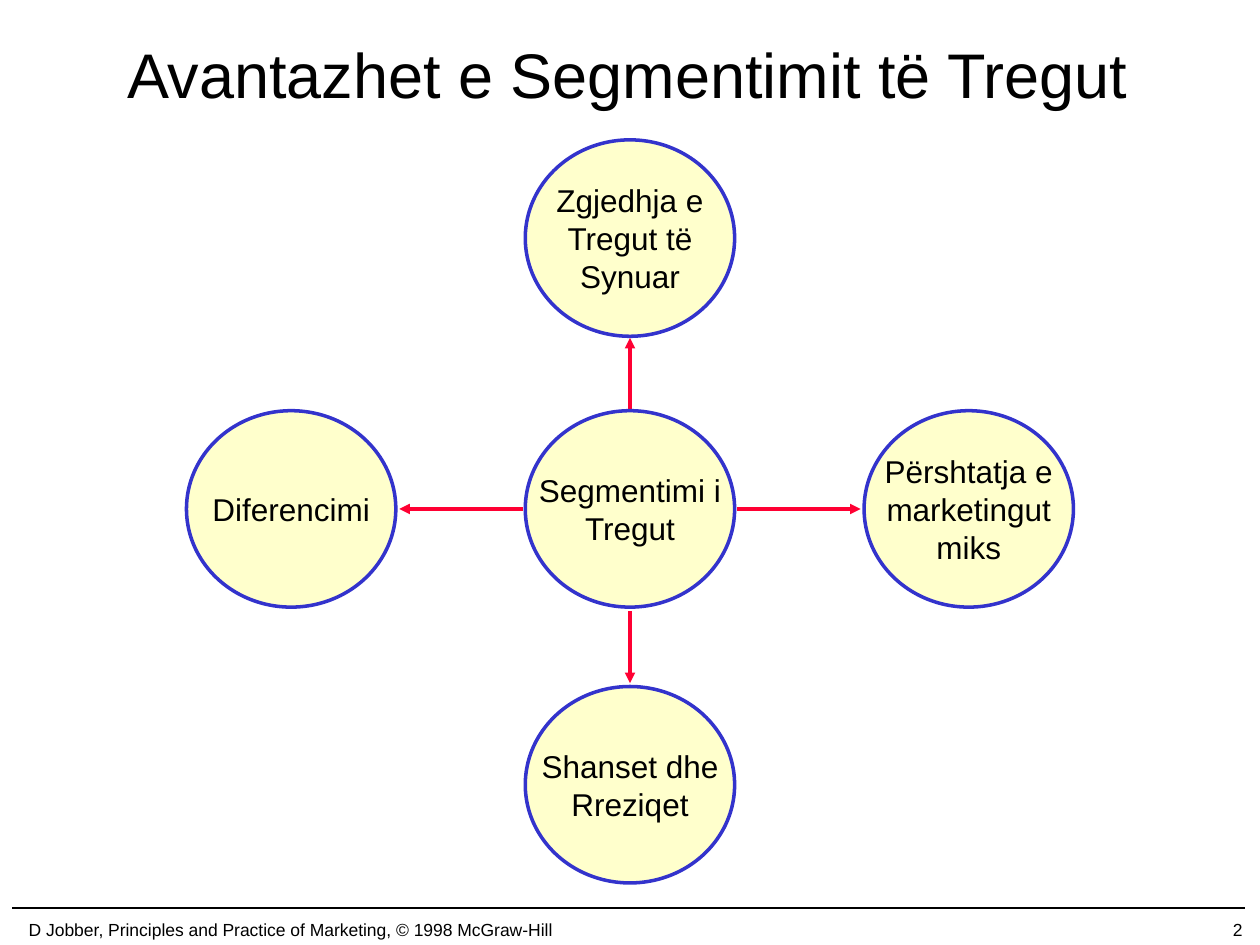
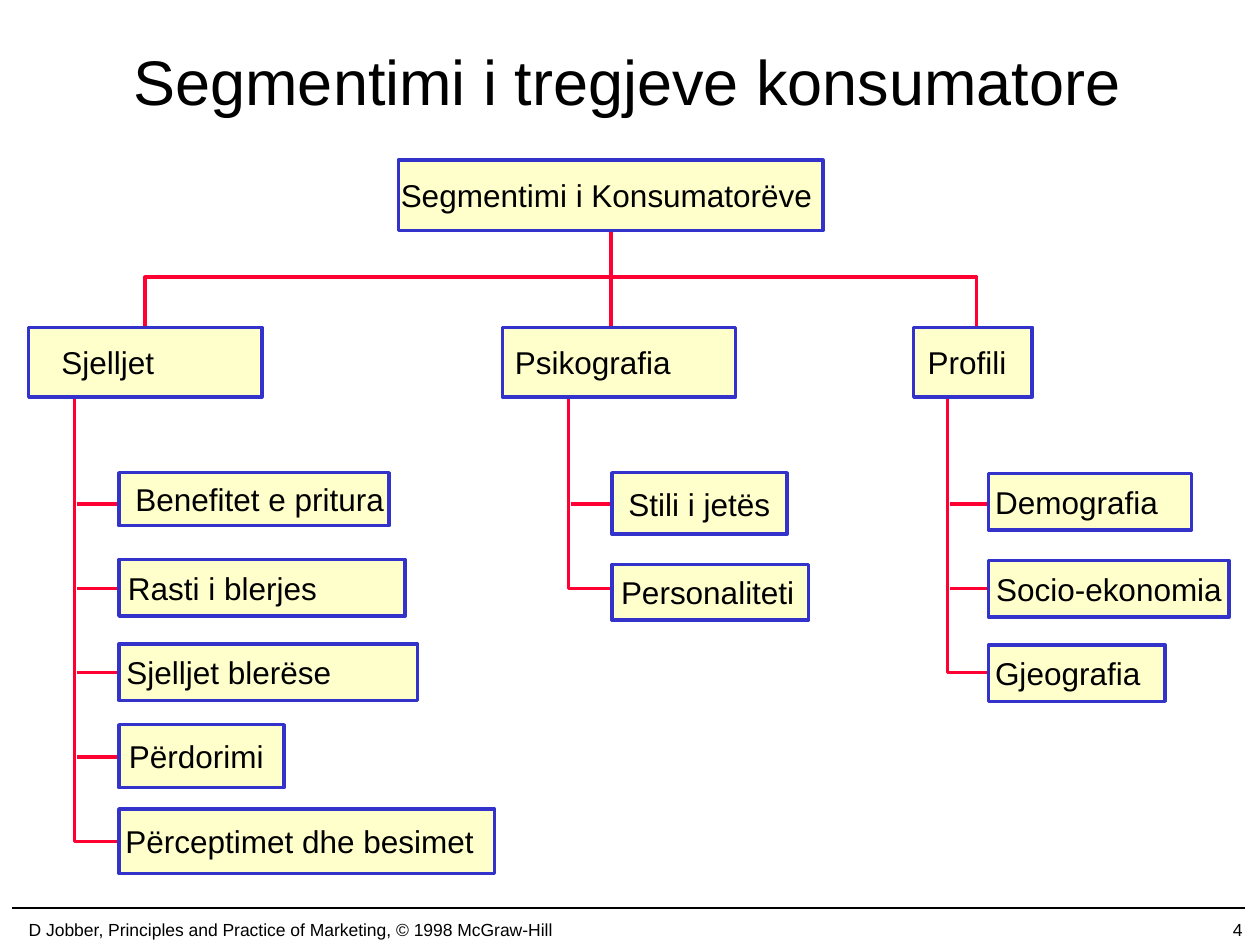
from collections import namedtuple

from lxml import etree
from pptx import Presentation
from pptx import util as u
from pptx.dml.color import RGBColor
from pptx.enum import shapes, text
from pptx.oxml.ns import qn

COLORS = {"ink": "000000", "box": "FFFFCC", "border": "3333CC", "link": "FF0033"}
FONT = "Arial"
FOOTER = "D Jobber, Principles and Practice of Marketing, © 1998 McGraw-Hill"
CENTER, LEFT, RIGHT = text.PP_ALIGN.CENTER, text.PP_ALIGN.LEFT, text.PP_ALIGN.RIGHT

# All lengths are centimetres.
Box = namedtuple("Box", "left top width height")
Spoke = namedtuple("Spoke", "label dx dy distance arrow_start arrow_end")
Leaf = namedtuple("Leaf", "label top width height inset")
Branch = namedtuple("Branch", "label left width inset drop trunk leaf_left leaves")

HUB = Box(10.59, 8.28, 4.22, 3.96)
SPOKES = [
    Spoke("Shanset dhe Rreziqet", 0, 1, 5.56, 2.06, 3.51),
    Spoke("Zgjedhja e Tregut të Synuar", 0, -1, 5.46, 1.98, 3.45),
    Spoke("Përshtatja e marketingut miks", 1, 0, 6.83, 2.16, 4.65),
    Spoke("Diferencimi", -1, 0, 6.83, 2.16, 4.65),
]

TREE = Box(0.58, 3.23, 24.19, 14.38)
# Branch positions are relative to the tree, leaf positions to the branch heading.
BRANCHES = [
    Branch("Sjelljet", 0, 4.7, 0.66, 2.34, 0.92, 1.82, [
        Leaf("Benefitet e pritura", 2.93, 5.44, 1.07, 0.33),
        Leaf("Rasti i blerjes", 4.68, 5.77, 1.14, 0.18),
        Leaf("Sjelljet blerëse", 6.38, 6.02, 1.14, 0.15),
        Leaf("Përdorimi", 8.01, 3.33, 1.27, 0.2),
        Leaf("Përceptimet dhe besimet", 9.71, 7.57, 1.3, 0.13),
    ]),
    Branch("Psikografia", 9.55, 4.7, 0.25, 2.19, 1.33, 2.21, [
        Leaf("Stili i jetës", 2.93, 3.53, 1.24, 0.33),
        Leaf("Personaliteti", 4.78, 3.96, 1.12, 0.18),
    ]),
    Branch("Profili", 17.84, 2.39, 0.28, 1.27, 0.68, 1.51, [
        Leaf("Demografia", 2.95, 4.09, 1.14, 0.13),
        Leaf("Socio-ekonomia", 4.7, 4.85, 1.14, 0.15),
        Leaf("Gjeografia", 6.4, 3.56, 1.14, 0.13),
    ]),
]


def rgb(name):
    return RGBColor.from_string(COLORS[name])


def in_cm(*lengths):
    return [u.Cm(length) for length in lengths]


def write(shape, words, size, align, spacing=None, insets=(0.25, 0.25)):
    frame = shape.text_frame
    frame.word_wrap = True
    frame.vertical_anchor = text.MSO_ANCHOR.MIDDLE
    frame.margin_left, frame.margin_right = in_cm(*insets)
    frame.margin_top = frame.margin_bottom = u.Cm(0.13)
    paragraph = frame.paragraphs[0]
    paragraph.alignment = align
    if spacing:
        paragraph.line_spacing = spacing
    run = paragraph.add_run()
    run.text = words
    run.font.name = FONT
    run.font.size = u.Pt(size)
    run.font.color.rgb = rgb("ink")


def add_text(slide, box, words, size, align, spacing=None):
    write(slide.shapes.add_textbox(*in_cm(*box)), words, size, align, spacing)


def add_panel(slide, kind, box):
    """Add a pale shape with a blue border."""
    shape = slide.shapes.add_shape(kind, *in_cm(*box))
    shape.shadow.inherit = False
    shape.fill.solid()
    shape.fill.fore_color.rgb = rgb("box")
    shape.line.color.rgb = rgb("border")
    shape.line.width = u.Pt(2)
    return shape


def add_line(slide, start, end, color="link", width=2, arrow=False):
    line = slide.shapes.add_connector(
        shapes.MSO_CONNECTOR.STRAIGHT, *in_cm(*start, *end))
    line.line.color.rgb = rgb(color)
    line.line.width = u.Pt(width)
    if arrow:
        etree.SubElement(line.line._get_or_add_ln(), qn("a:tailEnd"), type="triangle")
    etree.SubElement(line._element.spPr, qn("a:effectLst"))


def add_path(slide, *points):
    """Add an open red line through the points."""
    corners = [in_cm(*point) for point in points]
    builder = slide.shapes.build_freeform(*corners[0])
    builder.add_line_segments(corners[1:], close=False)
    shape = builder.convert_to_shape()
    shape.shadow.inherit = False
    shape.fill.background()
    shape.line.color.rgb = rgb("link")
    shape.line.width = u.Pt(2)


def add_base_slide(presentation, title, number, spacing=None):
    """Add a blank slide with the shared title, rule and footer."""
    slide = presentation.slides.add_slide(presentation.slide_layouts[6])
    add_line(slide, (0.25, 18.31), (25.1, 18.31), "ink", 1)
    add_text(slide, Box(20.02, 18.42, 5.28, 0.64), str(number), 10, RIGHT)
    add_text(slide, Box(0, 18.42, 11.71, 0.64), FOOTER, 10, CENTER)
    add_text(slide, Box(1.85, 0.03, 21.59, 3.18), title, 36, CENTER, spacing)
    return slide


def add_circle(slide, box, label):
    add_panel(slide, shapes.MSO_SHAPE.OVAL, box)
    overhang = 0.25
    label_box = box._replace(left=box.left - overhang, width=box.width + 2 * overhang)
    add_text(slide, label_box, label, 18, CENTER)


def add_hub_and_spokes(slide, hub, label, spokes):
    center_x, center_y = hub.left + hub.width / 2, hub.top + hub.height / 2
    for spoke in spokes:
        start, end = [
            (center_x + spoke.dx * reach, center_y + spoke.dy * reach)
            for reach in (spoke.arrow_start, spoke.arrow_end)]
        add_line(slide, start, end, arrow=True)
        add_circle(slide, hub._replace(
            left=hub.left + spoke.dx * spoke.distance,
            top=hub.top + spoke.dy * spoke.distance), spoke.label)
    add_circle(slide, hub, label)


def add_node(slide, box, label, inset):
    shape = add_panel(slide, shapes.MSO_SHAPE.RECTANGLE, box)
    write(shape, label, 18, LEFT, insets=(inset, 0))


def add_branch(slide, heading, branch):
    trunk = heading.left + branch.trunk
    leaf_left = heading.left + branch.leaf_left
    first_tick, tick_step = heading.top + 3.56, 1.7
    ticks = [first_tick + tick_step * i for i in range(len(branch.leaves))]
    add_path(slide, (trunk, heading.top + 1.2), (trunk, ticks[-1]),
             (leaf_left, ticks[-1]))
    for tick in ticks[:-1]:
        add_line(slide, (trunk + 0.05, tick), (leaf_left, tick))
    add_node(slide, heading, branch.label, branch.inset)
    for leaf in branch.leaves:
        box = Box(leaf_left, heading.top + leaf.top, leaf.width, leaf.height)
        add_node(slide, box, leaf.label, leaf.inset)


def add_tree(slide, tree, label, branches):
    root = Box(tree.left + 7.45, tree.top, 8.56, 1.42)
    headings = [Box(tree.left + branch.left, tree.top + 3.37, branch.width, 1.4)
                for branch in branches]
    first, middle, last = [heading.left + branch.drop
                           for heading, branch in zip(headings, branches)]
    bus, bottom = tree.top + 2.36, headings[0].top + 0.2
    add_line(slide, (middle, root.top + 1.1), (middle, bottom))
    add_path(slide, (first, bottom), (first, bus), (last, bus), (last, bottom))
    add_node(slide, root, label, 0.05)
    for heading, branch in zip(headings, branches):
        add_branch(slide, heading, branch)


def main():
    presentation = Presentation()
    presentation.slide_width, presentation.slide_height = in_cm(25.4, 19.05)
    slide = add_base_slide(presentation, "Avantazhet e Segmentimit të Tregut", 2, 0.8)
    add_hub_and_spokes(slide, HUB, "Segmentimi i Tregut", SPOKES)
    slide = add_base_slide(presentation, "Segmentimi i tregjeve konsumatore", 4)
    add_tree(slide, TREE, "Segmentimi i Konsumatorëve", BRANCHES)
    presentation.save("out.pptx")


if __name__ == "__main__":
    main()
